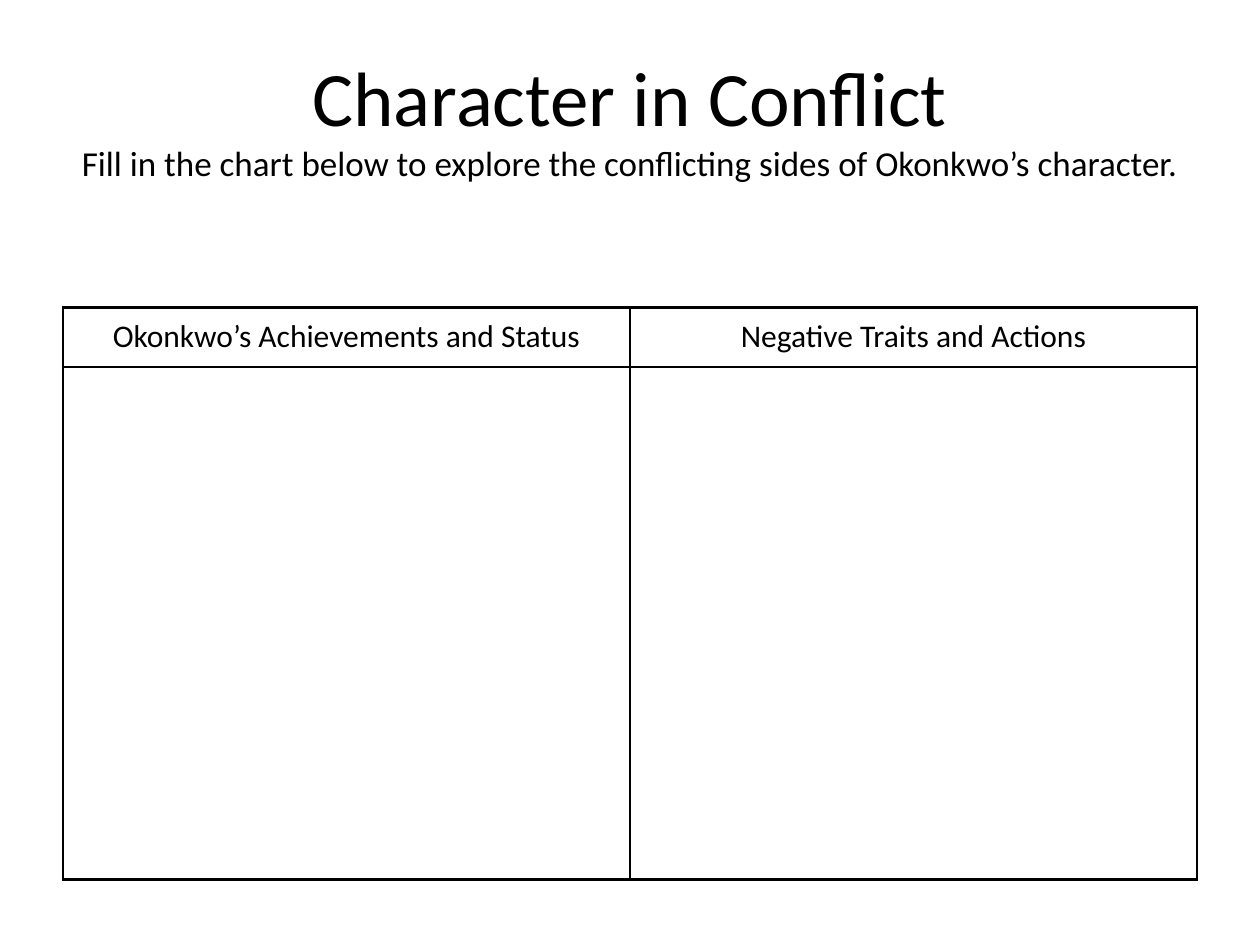
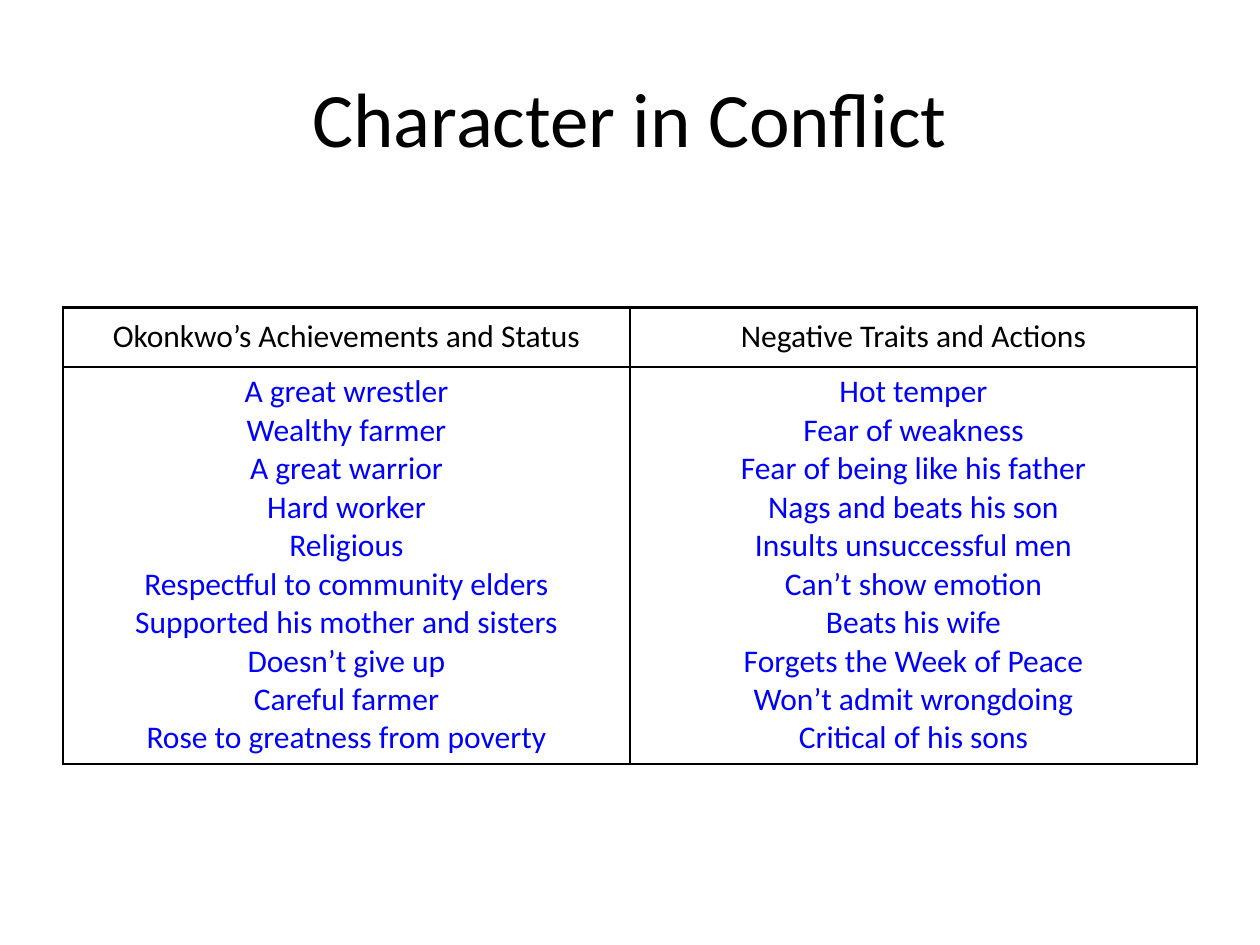
from lxml.etree import SubElement
from pptx import Presentation
from pptx.dml.color import RGBColor
from pptx.enum.text import MSO_ANCHOR, PP_ALIGN
from pptx.oxml.ns import qn
from pptx.util import Inches, Pt

COLORS = {"ink": "000000", "answer": "0000FF"}
FONT = "Calibri"
SLIDE_W, SLIDE_H = 10, 7.5
MARGIN = SLIDE_W / 20
CONTENT_W = SLIDE_W - 2 * MARGIN
TABLE_TOP, HEADER_H = 2.44, 0.47
BORDER_PT = 1.5

TITLE = "Character in Conflict"
TASK = "Fill in the chart below to explore the conflicting sides of Okonkwo’s character."
HEADERS = ["Okonkwo’s Achievements and Status", "Negative Traits and Actions"]
ACHIEVEMENTS = [
    "A great wrestler", "Wealthy farmer", "A great warrior", "Hard worker",
    "Religious", "Respectful to community elders",
    "Supported his mother and sisters", "Doesn’t give up", "Careful farmer",
    "Rose to greatness from poverty",
]
NEGATIVE_TRAITS = [
    "Hot temper", "Fear of weakness", "Fear of being like his father",
    "Nags and beats his son", "Insults unsuccessful men", "Can’t show emotion",
    "Beats his wife", "Forgets the Week of Peace", "Won’t admit wrongdoing",
    "Critical of his sons",
]


def add_run(p, text, size, color="ink"):
    """Add one formatted run to a centred paragraph."""
    p.alignment = PP_ALIGN.CENTER
    r = p.add_run()
    r.text = text
    r.font.name, r.font.size, r.font.bold = FONT, Pt(size), False
    r.font.color.rgb = RGBColor.from_string(COLORS[color])


def add_titled_slide(prs, subtitle=None):
    """Add a slide with the shared title and an optional smaller second line."""
    slide = prs.slides.add_slide(prs.slide_layouts[5])
    sp = slide.shapes.title
    sp.left, sp.top = Inches(MARGIN), Inches(SLIDE_H * 0.04)
    sp.width, sp.height = Inches(CONTENT_W), Inches(SLIDE_H / 6)
    tf = sp.text_frame
    tf.word_wrap, tf.vertical_anchor = True, MSO_ANCHOR.MIDDLE
    p = tf.paragraphs[0]
    add_run(p, TITLE, 44)
    if subtitle:
        p.add_line_break()
        add_run(p, subtitle, 20)
    return slide


def set_borders(cell):
    """Draw a solid line on all four sides of a cell."""
    tc_pr = cell._tc.get_or_add_tcPr()
    for i, side in enumerate(("lnL", "lnR", "lnT", "lnB")):
        ln = tc_pr.makeelement(qn(f"a:{side}"), {"w": str(Pt(BORDER_PT))})
        fill = SubElement(ln, qn("a:solidFill"))
        SubElement(fill, qn("a:srgbClr"), val=COLORS["ink"])
        tc_pr.insert(i, ln)


def fill_cell(cell, lines, color, inset):
    """Write lines as paragraphs into a clear, bordered cell."""
    cell.fill.background()
    set_borders(cell)
    cell.margin_top = cell.margin_bottom = Inches(inset)
    cell.margin_left = cell.margin_right = Inches(0.08)
    tf = cell.text_frame
    for i, line in enumerate(lines):
        p = tf.add_paragraph() if i else tf.paragraphs[0]
        add_run(p, line, 18, color)


def add_traits_table(slide, body_h, answers):
    """Add the two-column chart with its headers and answers."""
    cols = len(HEADERS)
    table = slide.shapes.add_table(
        2, cols, Inches(MARGIN), Inches(TABLE_TOP),
        Inches(CONTENT_W), Inches(HEADER_H + body_h)).table
    table.first_row = table.horz_banding = False
    table.rows[0].height, table.rows[1].height = Inches(HEADER_H), Inches(body_h)
    for c in range(cols):
        table.columns[c].width = Inches(CONTENT_W / cols)
        fill_cell(table.cell(0, c), [HEADERS[c]], "ink", 0.08)
        fill_cell(table.cell(1, c), answers[c], "answer", 0.05)


def main():
    """Build the blank chart and the completed chart."""
    prs = Presentation()
    prs.slide_width, prs.slide_height = Inches(SLIDE_W), Inches(SLIDE_H)
    add_traits_table(add_titled_slide(prs, TASK), 4.07, [[], []])
    add_traits_table(add_titled_slide(prs), 3.15, [ACHIEVEMENTS, NEGATIVE_TRAITS])
    prs.save("out.pptx")


if __name__ == "__main__":
    main()
